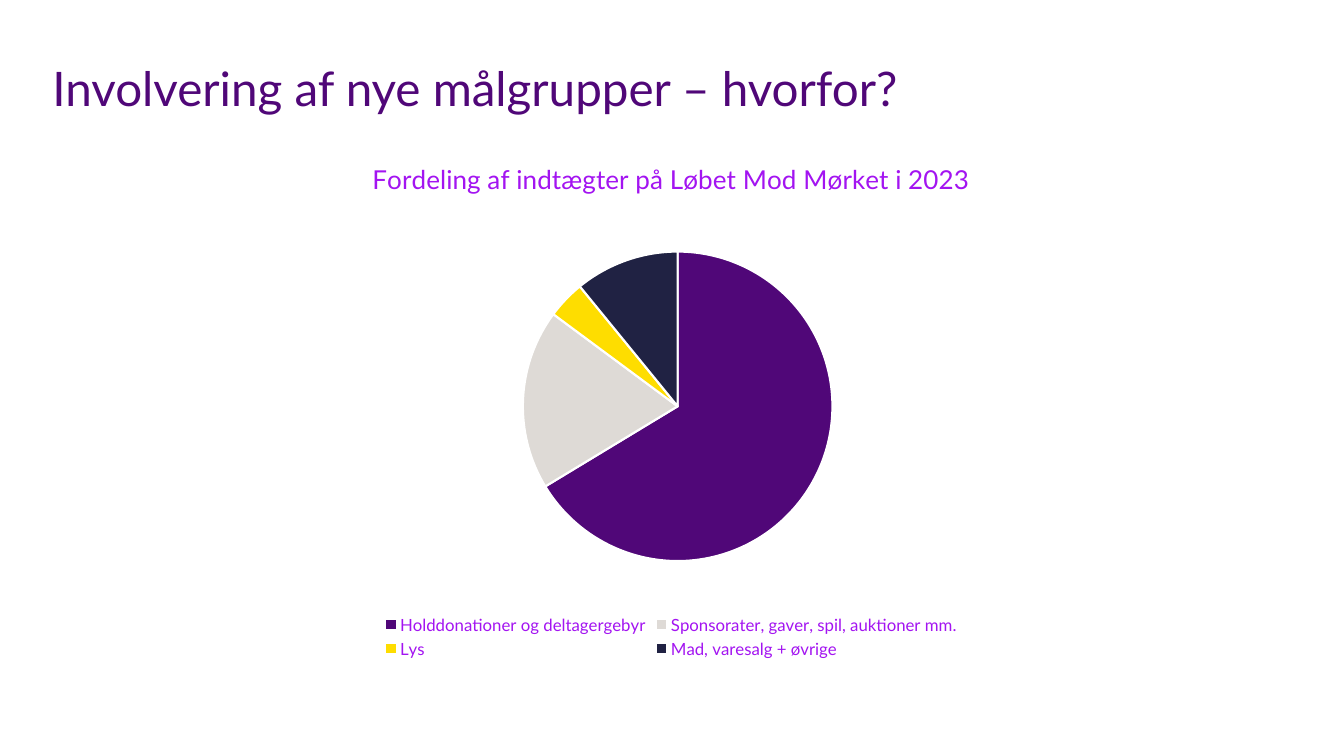
from dataclasses import dataclass

import pptx
import pptx.chart.data
import pptx.dml.color
import pptx.enum.chart
import pptx.enum.text
import pptx.oxml
import pptx.oxml.ns
import pptx.util

EMU_PER_PX = 9144  # 100 px to the inch


@dataclass(frozen=True)
class Theme:
    font: str = "Lato"
    purple: str = "500778"
    violet: str = "A314F1"
    white: str = "FFFFFF"
    slices: tuple = ("500778", "DEDAD6", "FEDD00", "202243")
    heading_size: float = 34
    chart_title_size: float = 18.6
    legend_size: float = 12
    chart_size: float = 10


THEME = Theme()
CHART_TITLE = "Fordeling af indtægter på Løbet Mod Mørket i 2023"
INCOME = {
    "Holddonationer og deltagergebyr": 67,
    "Sponsorater, gaver, spil, auktioner mm.": 19,
    "Lys": 4,
    "Mad, varesalg + øvrige": 11,
}


def px(*lengths):
    return [pptx.util.Emu(length * EMU_PER_PX) for length in lengths]


def rgb(color):
    return pptx.dml.color.RGBColor.from_string(color)


def style_font(font, size, color):
    font.name = THEME.font
    font.size = pptx.util.Pt(size)
    font.bold = False
    font.color.rgb = rgb(color)


def add_heading(slide, text, box):
    frame = slide.shapes.add_textbox(*px(*box)).text_frame
    frame.word_wrap = True
    frame.vertical_anchor = pptx.enum.text.MSO_ANCHOR.TOP
    frame.margin_left = frame.margin_right = 0
    frame.margin_top = frame.margin_bottom = 0
    paragraph = frame.paragraphs[0]
    paragraph.text = text
    paragraph.line_spacing = 0.9
    style_font(paragraph.font, THEME.heading_size, THEME.purple)


def place_plot(chart, x, y, w, h):
    """Fix the inner plot area, as fractions of the chart."""
    plot_area = chart._chartSpace.chart.plotArea
    for old_layout in plot_area.findall(pptx.oxml.ns.qn("c:layout")):
        plot_area.remove(old_layout)
    sizes = "".join(
        f'<c:{name} val="{value}"/>'
        for name, value in (("x", x), ("y", y), ("w", w), ("h", h))
    )
    plot_area.insert(0, pptx.oxml.parse_xml(
        f'<c:layout {pptx.oxml.ns.nsdecls("c")}><c:manualLayout>'
        '<c:layoutTarget val="inner"/><c:xMode val="edge"/><c:yMode val="edge"/>'
        f'{sizes}</c:manualLayout></c:layout>'
    ))


def add_pie(slide, title, values, box):
    chart_data = pptx.chart.data.CategoryChartData()
    chart_data.categories = list(values)
    chart_data.add_series(title, list(values.values()))
    chart = slide.shapes.add_chart(
        pptx.enum.chart.XL_CHART_TYPE.PIE, *px(*box), chart_data
    ).chart
    style_font(chart.font, THEME.chart_size, THEME.purple)

    chart.has_title = True
    chart.chart_title.include_in_layout = False
    paragraph = chart.chart_title.text_frame.paragraphs[0]
    paragraph.text = title
    style_font(paragraph.font, THEME.chart_title_size, THEME.violet)

    chart.has_legend = True
    chart.legend.position = pptx.enum.chart.XL_LEGEND_POSITION.BOTTOM
    chart.legend.include_in_layout = False
    style_font(chart.legend.font, THEME.legend_size, THEME.violet)

    plot = chart.plots[0]
    plot.vary_by_categories = True
    for index, color in enumerate(THEME.slices):
        slice_format = plot.series[0].points[index].format
        slice_format.fill.solid()
        slice_format.fill.fore_color.rgb = rgb(color)
        slice_format.line.color.rgb = rgb(THEME.white)
        slice_format.line.width = pptx.util.Pt(1.5)
    place_plot(chart, 0.38, 0.18, 0.25, 0.66)


def main():
    presentation = pptx.Presentation()
    presentation.slide_width, presentation.slide_height = px(1333, 750)
    slide = presentation.slides.add_slide(presentation.slide_layouts[6])
    add_pie(slide, CHART_TITLE, INCOME, (52, 139, 1228, 518))
    add_heading(slide, "Involvering af nye målgrupper – hvorfor?", (52, 65, 1228, 56))
    presentation.save("out.pptx")


if __name__ == "__main__":
    main()
